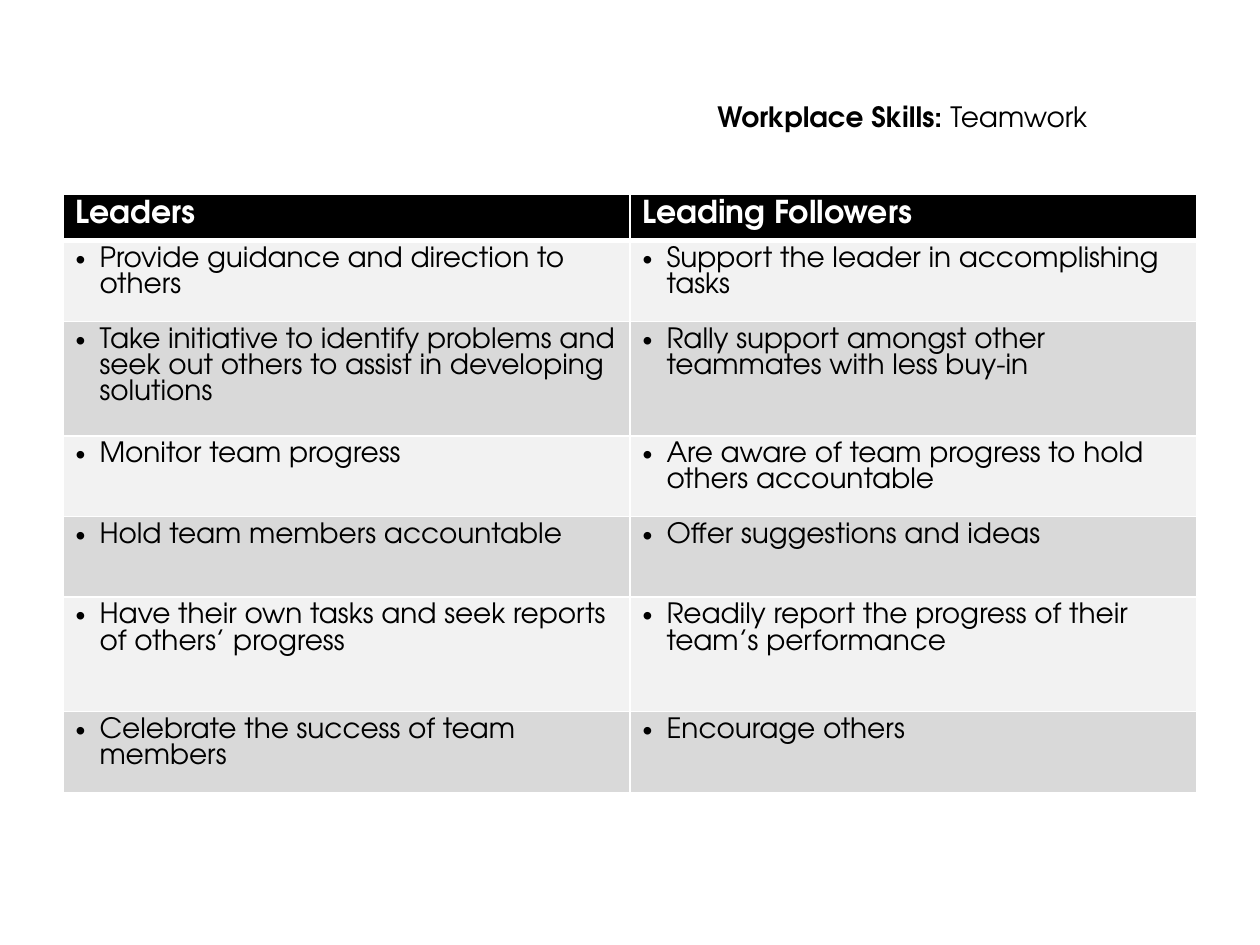
from lxml import etree
from pptx import Presentation
from pptx.dml.color import RGBColor
from pptx.enum.text import MSO_ANCHOR, PP_ALIGN
from pptx.oxml.ns import qn
from pptx.util import Inches, Pt

MIDDLE, RIGHT = MSO_ANCHOR.MIDDLE, PP_ALIGN.RIGHT
BLACK = RGBColor(0x00, 0x00, 0x00)
WHITE = RGBColor(0xFF, 0xFF, 0xFF)
PALE = RGBColor(0xF2, 0xF2, 0xF2)
GREY = RGBColor(0xD9, 0xD9, 0xD9)
FONT = "TeX Gyre Adventor"

HEADING = [("Workplace Skills: ", True), ("Teamwork", False)]
ROLES = [
    (0.37, "Leaders", "Leading Followers"),
    (0.64, "Provide guidance and direction to others",
     "Support the leader in accomplishing tasks"),
    (0.91, "Take initiative to identify problems and seek out others to assist in developing solutions",
     "Rally support amongst other teammates with less buy-in"),
    (0.64, "Monitor team progress",
     "Are aware of team progress to hold others accountable"),
    (0.64, "Hold team members accountable", "Offer suggestions and ideas"),
    (0.91, "Have their own tasks and seek reports of others’ progress",
     "Readily report the progress of their team’s performance"),
    (0.64, "Celebrate the success of team members", "Encourage others"),
]


def set_font(font, size, color, bold):
    font.name, font.size, font.bold = FONT, Pt(size), bold
    font.color.rgb = color


def add_bullet(paragraph):
    properties = paragraph._p.get_or_add_pPr()
    properties.set("marL", str(Inches(0.19)))
    properties.set("indent", str(-Inches(0.19)))
    etree.SubElement(properties, qn("a:buFont")).set("typeface", "Arial")
    etree.SubElement(properties, qn("a:buChar")).set("char", "•")


def set_borders(cell, top, bottom):
    properties = cell._tc.get_or_add_tcPr()
    for side, width in (("L", 1), ("R", 1), ("T", top), ("B", bottom)):
        border = etree.SubElement(properties, qn(f"a:ln{side}"), w=str(Pt(width)))
        fill = etree.SubElement(border, qn("a:solidFill"))
        etree.SubElement(fill, qn("a:srgbClr"), val=str(WHITE))


def add_heading(slide):
    title = slide.shapes.title
    title.left, title.top = Inches(0.6), Inches(0.3)
    title.width, title.height = Inches(8.13), Inches(1.25)
    title.text_frame.vertical_anchor = MIDDLE
    paragraph = title.text_frame.paragraphs[0]
    paragraph.alignment = RIGHT
    for text, bold in HEADING:
        run = paragraph.add_run()
        run.text = text
        set_font(run.font, 16, BLACK, bold)


def add_roles(slide):
    total = sum(height for height, *_ in ROLES)
    table = slide.shapes.add_table(len(ROLES), 2, Inches(0.5), Inches(1.54),
                                   Inches(9), Inches(total)).table
    for row, (height, *texts) in enumerate(ROLES):
        table.rows[row].height = Inches(height)
        is_header = row == 0
        for column, text in enumerate(texts):
            cell = table.cell(row, column)
            cell.text = text
            paragraph = cell.text_frame.paragraphs[0]
            if is_header:
                set_font(paragraph.font, 18, WHITE, True)
            else:
                add_bullet(paragraph)
                set_font(paragraph.font, 16, BLACK, False)
            set_borders(cell, 3 if row == 1 else 1, 3 if is_header else 1)
            cell.fill.solid()
            cell.fill.fore_color.rgb = BLACK if is_header else (GREY, PALE)[row % 2]


def main():
    presentation = Presentation()
    presentation.slide_width, presentation.slide_height = Inches(10), Inches(7.5)
    slide = presentation.slides.add_slide(presentation.slide_layouts[5])
    add_heading(slide)
    add_roles(slide)
    presentation.save("out.pptx")


if __name__ == "__main__":
    main()
